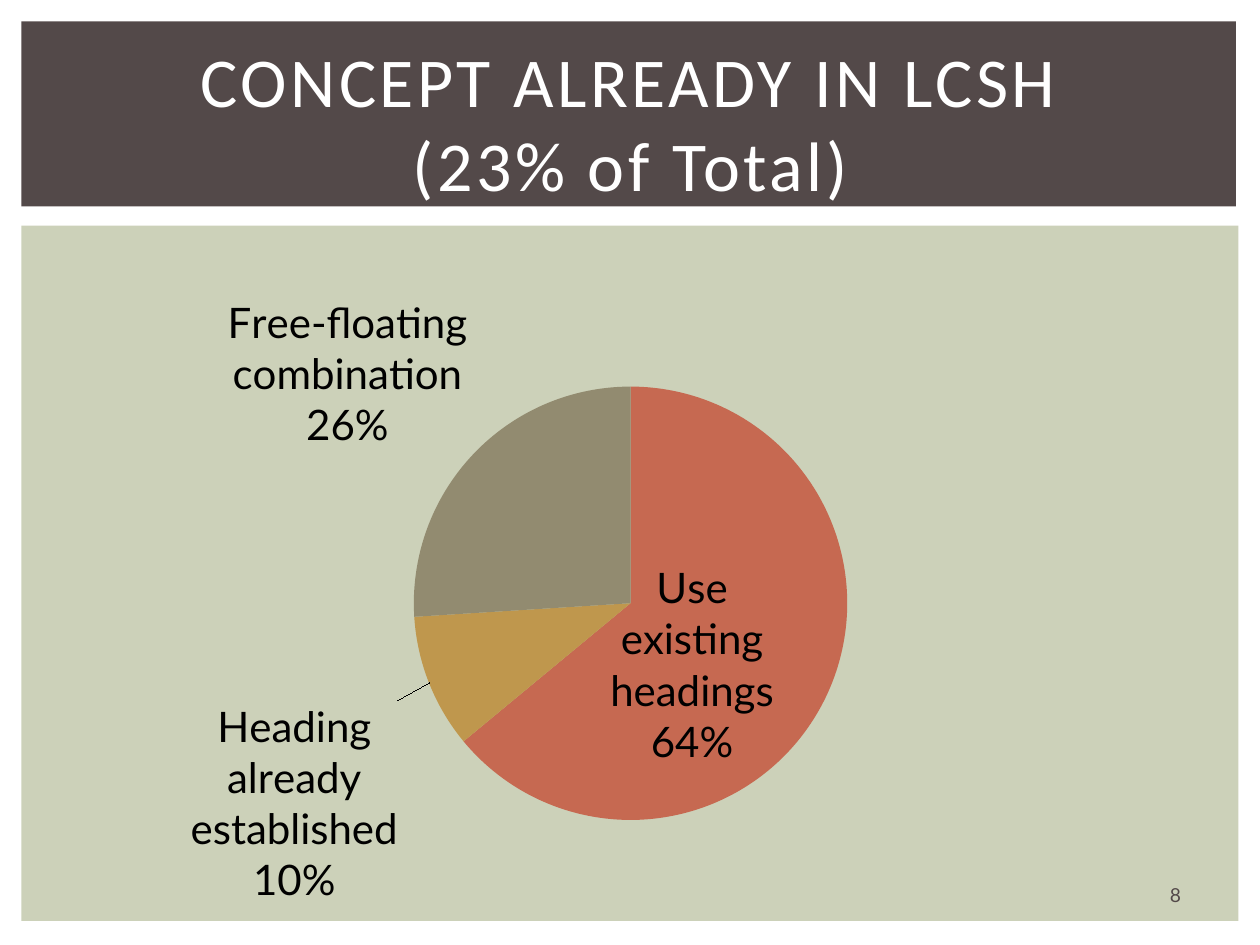
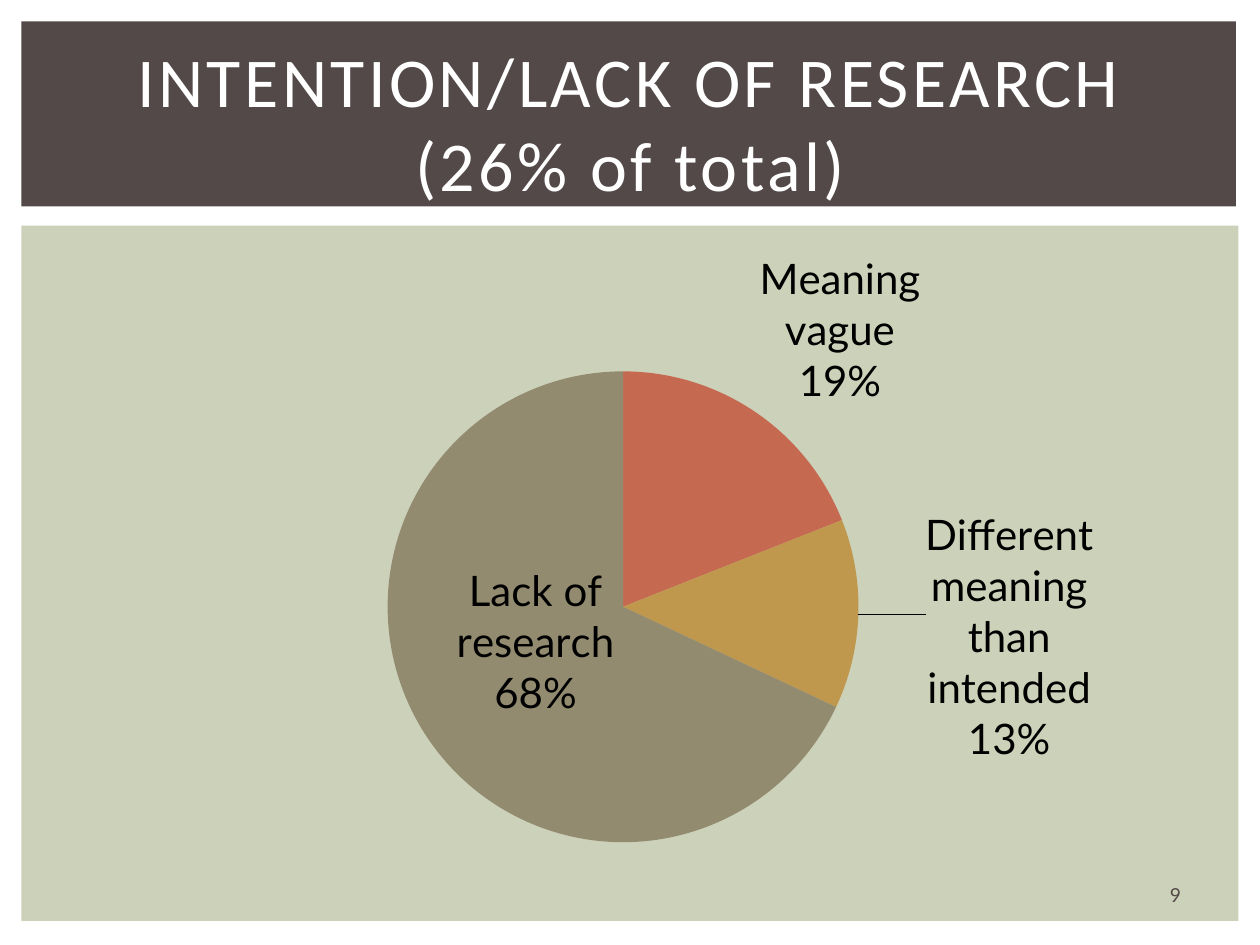
from lxml import etree
from pptx import Presentation
from pptx.chart.data import CategoryChartData
from pptx.dml.color import RGBColor
from pptx.enum.chart import XL_CHART_TYPE, XL_LABEL_POSITION
from pptx.enum.shapes import MSO_SHAPE
from pptx.enum.text import MSO_ANCHOR, PP_ALIGN
from pptx.oxml.ns import qn
from pptx.util import Pt

PIE = XL_CHART_TYPE.PIE
INSIDE = XL_LABEL_POSITION.CENTER
OUTSIDE = XL_LABEL_POSITION.OUTSIDE_END
RECTANGLE = MSO_SHAPE.RECTANGLE
MIDDLE = MSO_ANCHOR.MIDDLE
CENTERED = PP_ALIGN.CENTER

SAGE = RGBColor(0xCC, 0xD1, 0xB9)
BROWN = RGBColor(0x53, 0x49, 0x49)
WHITE = RGBColor(0xFF, 0xFF, 0xFF)
BLACK = RGBColor(0, 0, 0)
SLICE_COLORS = [
    RGBColor(0xC6, 0x69, 0x51),
    RGBColor(0xBF, 0x97, 0x4D),
    RGBColor(0x92, 0x8B, 0x70),
]

SLIDE_SIZE = (720, 540)
BANDS = [((12.24, 128.9, 695.5, 397.4), SAGE), ((12.24, 12.24, 694, 105.8), BROWN)]
TITLE_BOX = (30.24, 28.1, 660.2, 82.8)
NUMBER_BOX = (648.7, 500.4, 46.1, 21.6)
TITLE_FONT = {"name": "Calibri", "size": Pt(40)}
NUMBER_FONT = {"name": "Lato", "size": Pt(11)}
LABEL_FONT = {"name": "Lato", "size": Pt(24)}
TITLE_SPACING = "200"

SLIDES = [
    {
        "title": "CONCEPT ALREADY IN LCSH\v(23% of Total)",
        "number": "8",
        "chart_box": (12.24, 120.2, 696.2, 419.8),
        "pie_layout": {"x": 0.32, "y": 0.24, "w": 0.36, "h": 0.59},
        "slices": [
            ("Use existing headings", 64, INSIDE, (-0.03, 0.02)),
            ("Heading already established", 10, OUTSIDE, (-0.02, 0.02)),
            ("Free-floating combination", 26, OUTSIDE, None),
        ],
    },
    {
        "title": "INTENTION/LACK OF RESEARCH\v(26% of total)",
        "number": "9",
        "chart_box": (23.76, 125.3, 678.2, 414),
        "pie_layout": {"x": 0.29, "y": 0.21, "w": 0.4, "h": 0.65},
        "slices": [
            ("Meaning vague", 19, OUTSIDE, None),
            ("Different meaning than intended", 13, OUTSIDE, (0.05, 0.03)),
            ("Lack of research", 68, INSIDE, (0.01, -0.04)),
        ],
    },
]


def in_points(box):
    return [Pt(length) for length in box]


def style_font(font, formats, color):
    for attribute, value in formats.items():
        setattr(font, attribute, value)
    font.color.rgb = color


def add_band(slide, box, color):
    band = slide.shapes.add_shape(RECTANGLE, *in_points(box))
    band.shadow.inherit = False
    band.fill.solid()
    band.fill.fore_color.rgb = color
    band.line.fill.background()


def add_text(slide, box, text, formats, color):
    frame = slide.shapes.add_textbox(*in_points(box)).text_frame
    frame.word_wrap = True
    frame.vertical_anchor = MIDDLE
    frame.text = text
    paragraph = frame.paragraphs[0]
    paragraph.alignment = CENTERED
    for run in paragraph.runs:
        style_font(run.font, formats, color)
    return paragraph


def manual_layout(values):
    layout = etree.Element(qn("c:layout"))
    manual = etree.SubElement(layout, qn("c:manualLayout"))
    for tag, value in values.items():
        etree.SubElement(manual, qn(f"c:{tag}")).set("val", str(value))
    return layout


def show_name_and_percent(labels_xml):
    for tag, shown in {"showVal": "0", "showCatName": "1", "showPercent": "1"}.items():
        labels_xml.find(qn(f"c:{tag}")).set("val", shown)
    separator = etree.Element(qn("c:separator"))
    separator.text = "\n"
    last_flag = labels_xml.find(qn("c:showBubbleSize"))
    if last_flag is None:
        last_flag = labels_xml.find(qn("c:showPercent"))
    last_flag.addnext(separator)
    return separator


def add_pie(slide, box, pie_layout, slices):
    data = CategoryChartData()
    data.categories = [name for name, *_ in slices]
    data.add_series("Series 1", [share for _, share, *_ in slices])
    chart = slide.shapes.add_chart(PIE, *in_points(box), data).chart
    chart.has_title = False
    chart.has_legend = False
    style_font(chart.font, {"name": "Lato", "size": Pt(10)}, BLACK)
    plot = chart.plots[0]
    plot.vary_by_categories = True
    series = plot.series[0]

    style_font(series.data_labels.font, LABEL_FONT, BLACK)
    labels_xml = series._element.find(qn("c:dLbls"))
    separator = show_name_and_percent(labels_xml)
    leader_lines = labels_xml.find(qn("c:showLeaderLines"))
    if leader_lines is None:
        leader_lines = etree.Element(qn("c:showLeaderLines"))
        separator.addnext(leader_lines)
    leader_lines.set("val", "1")

    for index, (_, _, position, offset) in enumerate(slices):
        point = series.points[index]
        point.format.fill.solid()
        point.format.fill.fore_color.rgb = SLICE_COLORS[index]
        point.format.line.fill.background()
        label = point.data_label
        style_font(label.font, LABEL_FONT, BLACK)
        label.position = position
        label_xml = labels_xml.findall(qn("c:dLbl"))[index]
        show_name_and_percent(label_xml)
        if offset:
            label_xml.find(qn("c:idx")).addnext(manual_layout(dict(zip("xy", offset))))

    plot_area = chart._chartSpace.find(".//" + qn("c:plotArea"))
    for automatic in plot_area.findall(qn("c:layout")):
        plot_area.remove(automatic)
    placement = {"layoutTarget": "inner", "xMode": "edge", "yMode": "edge"}
    plot_area.insert(0, manual_layout({**placement, **pie_layout}))


def build_slide(deck, content):
    slide = deck.slides.add_slide(deck.slide_layouts[6])
    for box, color in BANDS:
        add_band(slide, box, color)
    title = add_text(slide, TITLE_BOX, content["title"], TITLE_FONT, WHITE)
    for run in title.runs:
        run.font._element.set("spc", TITLE_SPACING)
    add_pie(slide, content["chart_box"], content["pie_layout"], content["slices"])
    add_text(slide, NUMBER_BOX, content["number"], NUMBER_FONT, BROWN)


def main():
    deck = Presentation()
    deck.slide_width, deck.slide_height = in_points(SLIDE_SIZE)
    for content in SLIDES:
        build_slide(deck, content)
    deck.save("out.pptx")


if __name__ == "__main__":
    main()
